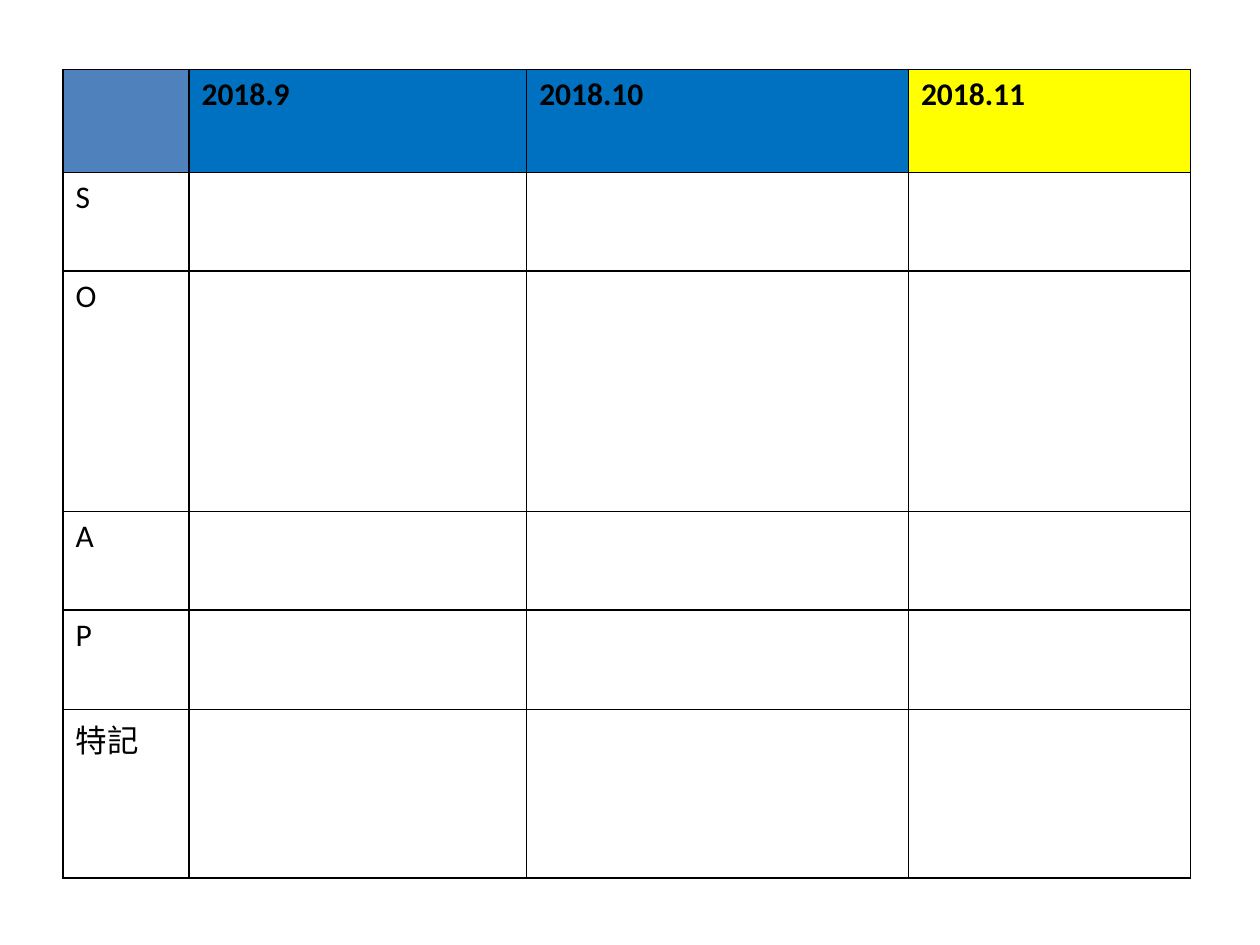
import pptx
import pptx.dml.color
import pptx.oxml.ns
import pptx.util
from lxml import etree

Inches = pptx.util.Inches
Pt = pptx.util.Pt
RGBColor = pptx.dml.color.RGBColor
qn = pptx.oxml.ns.qn

BLACK = RGBColor(0x00, 0x00, 0x00)
STEEL = RGBColor(0x4F, 0x81, 0xBD)
BLUE = RGBColor(0x00, 0x70, 0xC0)
YELLOW = RGBColor(0xFF, 0xFF, 0x00)

HEADERS = ["", "2018.9", "2018.10", "2018.11"]
HEADER_FILLS = [STEEL, BLUE, BLUE, YELLOW]
ROW_LABELS = ["S", "O", "A", "P", "特記"]
COL_WIDTHS = [1, 2.68, 3.03, 2.24]
ROW_HEIGHTS = [0.82, 0.78, 1.91, 0.78, 0.79, 1.34]


class SlideBuilder:
    font_name = "Calibri"
    font_size = Pt(18)
    border_width = Pt(1)

    def __init__(self, slide):
        self.slide = slide

    def border(self, cell):
        tcPr = cell._tc.get_or_add_tcPr()
        for side in ("a:lnL", "a:lnR", "a:lnT", "a:lnB"):
            ln = etree.SubElement(tcPr, qn(side), w=str(self.border_width))
            solid = etree.SubElement(ln, qn("a:solidFill"))
            etree.SubElement(solid, qn("a:srgbClr"), val=str(BLACK))

    def cell(self, cell, text, fill, bold):
        self.border(cell)
        if fill is None:
            cell.fill.background()
        else:
            cell.fill.solid()
            cell.fill.fore_color.rgb = fill
        cell.text_frame.text = text
        p = cell.text_frame.paragraphs[0]
        for item in (p, *p.runs):
            item.font.name = self.font_name
            item.font.size = self.font_size
            item.font.bold = bold
            item.font.color.rgb = BLACK

    def table(self, left, top, widths, heights, rows, header_fills):
        table = self.slide.shapes.add_table(
            len(heights), len(widths), Inches(left), Inches(top),
            Inches(sum(widths)), Inches(sum(heights))).table
        table.horz_banding = False
        for column, width in zip(table.columns, widths):
            column.width = Inches(width)
        for i, (row, height) in enumerate(zip(table.rows, heights)):
            row.height = Inches(height)
            for j, cell in enumerate(row.cells):
                fill = header_fills[j] if i == 0 else None
                self.cell(cell, rows[i][j], fill, i == 0)


def main():
    prs = pptx.Presentation()
    prs.slide_width = Inches(10)
    prs.slide_height = Inches(7.5)
    builder = SlideBuilder(prs.slides.add_slide(prs.slide_layouts[6]))
    rows = [HEADERS] + [[label, "", "", ""] for label in ROW_LABELS]
    builder.table(0.5, 0.55, COL_WIDTHS, ROW_HEIGHTS, rows, HEADER_FILLS)
    prs.save("out.pptx")


if __name__ == "__main__":
    main()
